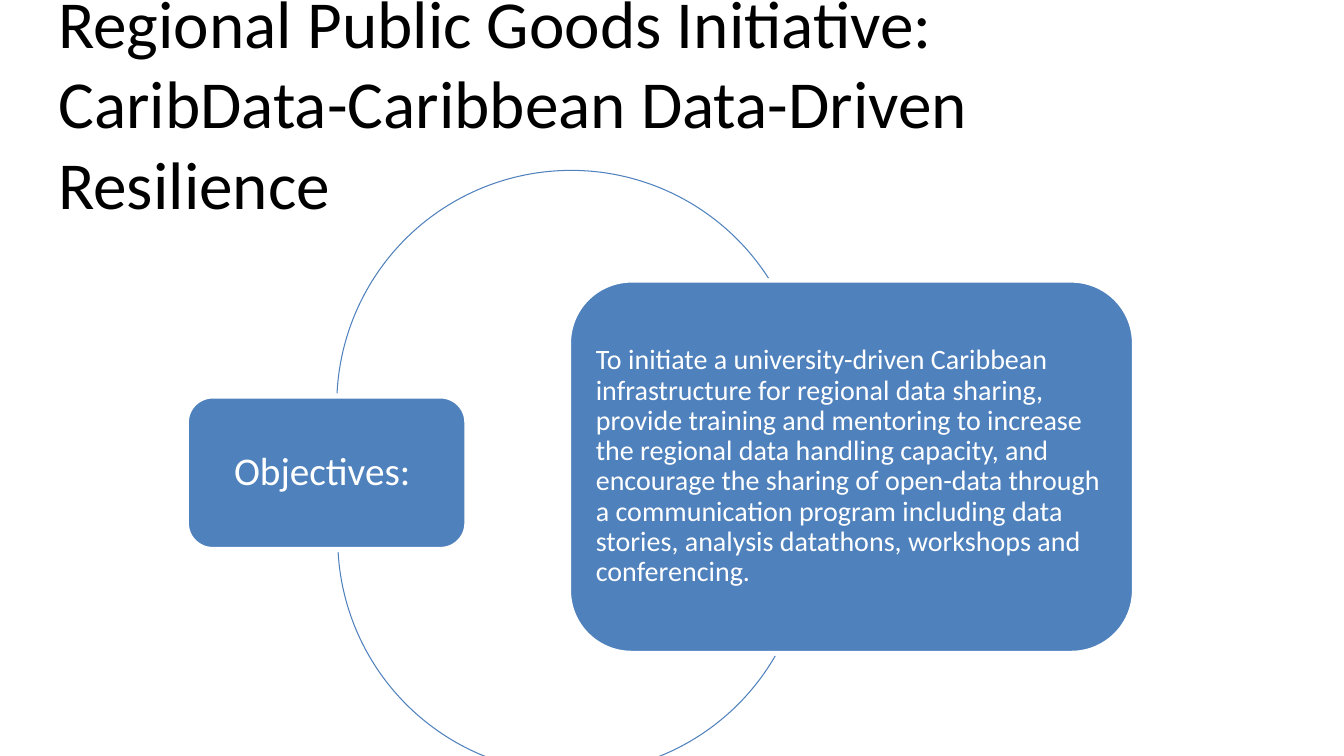
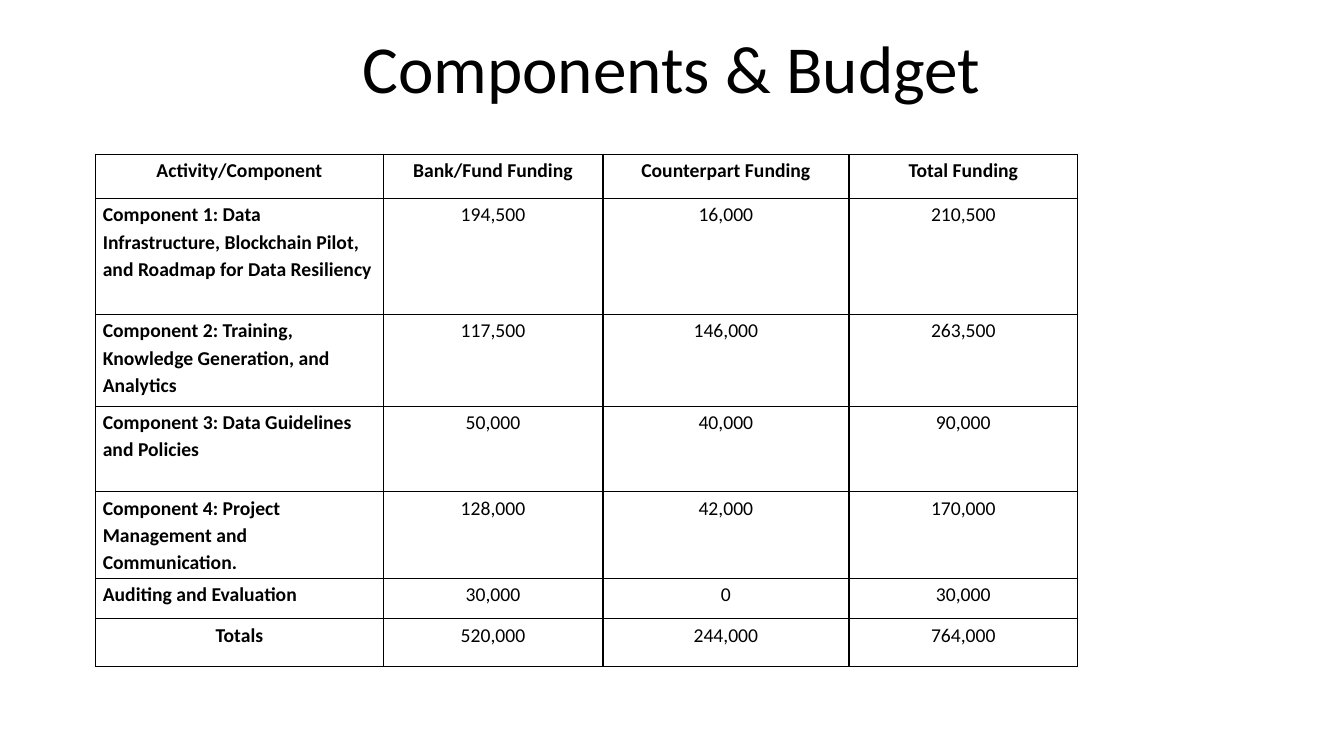
from dataclasses import dataclass
from typing import Any

from lxml import etree
from pptx import Presentation
from pptx.dml.color import RGBColor
from pptx.enum.shapes import MSO_SHAPE
from pptx.enum.text import MSO_ANCHOR, PP_ALIGN
from pptx.oxml.ns import qn
from pptx.util import Inches, Pt

ARC = MSO_SHAPE.ARC
ROUNDED = MSO_SHAPE.ROUNDED_RECTANGLE
LEFT, CENTER = PP_ALIGN.LEFT, PP_ALIGN.CENTER
MIDDLE, TOP = MSO_ANCHOR.MIDDLE, MSO_ANCHOR.TOP

BLUE = "4F81BD"
WHITE = "FFFFFF"
BLACK = "000000"
FONT = "Calibri"
TITLE_SIZE = 48
ARC_UNITS_PER_DEGREE = 0.6


@dataclass(frozen=True)
class Area:
    left: float
    top: float
    width: float
    height: float

    def lengths(self) -> list:
        return [Inches(value) for value in (self.left, self.top, self.width, self.height)]


@dataclass(frozen=True)
class Card:
    area: Area
    text: str
    size: int
    align: Any
    inset: float


@dataclass(frozen=True)
class Arc:
    area: Area
    start: float
    end: float


CARDS = [
    Card(Area(1.86, 3.94, 2.76, 1.5), "Objectives: ", 28, CENTER, 0.12),
    Card(
        Area(5.65, 2.79, 5.59, 3.68),
        "To initiate a university-driven Caribbean infrastructure for regional data sharing, "
        "provide training and mentoring to increase the regional data handling capacity, and "
        "encourage the sharing of open-data through a communication program including data "
        "stories, analysis datathons, workshops and conferencing.",
        20, LEFT, 0.08,
    ),
]
ARCS = [
    Arc(Area(3.34, 1.69, 4.65, 4.65), 182.8, 327.3),
    Arc(Area(3.35, 3.02, 4.65, 4.65), 30, 176.7),
]

BUDGET_ORIGIN = (0.95, 1.53)
COLUMN_WIDTHS = [2.85, 2.18, 2.44, 2.27]
ROW_HEIGHTS = [0.44, 1.15, 0.91, 0.85, 0.86, 0.4, 0.47]
BUDGET_ROWS = [
    ["Activity/Component", "Bank/Fund Funding", "Counterpart Funding", "Total Funding"],
    ["Component 1: Data Infrastructure, Blockchain Pilot, and Roadmap for Data Resiliency",
     "194,500", "16,000", "210,500"],
    ["Component 2: Training, Knowledge Generation, and Analytics",
     "117,500", "146,000", "263,500"],
    ["Component 3: Data Guidelines and Policies", "50,000", "40,000", "90,000"],
    ["Component 4: Project Management and Communication.", "128,000", "42,000", "170,000"],
    ["Auditing and Evaluation", "30,000", "0", "30,000"],
    ["Totals", "520,000", "244,000", "764,000"],
]


def color(value: str) -> RGBColor:
    return RGBColor.from_string(value)


def apply(target: Any, values: dict) -> None:
    for name, value in values.items():
        setattr(target, name, value)


def write(frame: Any, text: str, size: int, tint: str, align: Any,
          spacing: float = 1.0, bold: bool = False) -> None:
    frame.word_wrap = True
    para = frame.paragraphs[0]
    para.text = text
    apply(para, {"alignment": align, "line_spacing": spacing})
    apply(para.font, {"name": FONT, "size": Pt(size), "bold": bold})
    para.font.color.rgb = color(tint)


def add_title(page: Any, text: str, area: Area, align: Any) -> None:
    frame = page.shapes.add_textbox(*area.lengths()).text_frame
    frame.vertical_anchor = MIDDLE
    write(frame, text, TITLE_SIZE, BLACK, align)


def add_arc(page: Any, arc: Arc) -> None:
    shape = page.shapes.add_shape(ARC, *arc.area.lengths())
    shape.shadow.inherit = False
    shape.fill.background()
    shape.line.color.rgb = color(BLUE)
    shape.line.width = Pt(0.75)
    for index, angle in enumerate((arc.start, arc.end)):
        shape.adjustments[index] = angle * ARC_UNITS_PER_DEGREE


def add_card(page: Any, card: Card) -> None:
    box = page.shapes.add_shape(ROUNDED, *card.area.lengths())
    box.shadow.inherit = False
    box.fill.solid()
    box.fill.fore_color.rgb = color(BLUE)
    box.line.color.rgb = color(WHITE)
    box.line.width = Pt(2)
    inset = Inches(card.inset)
    apply(box.text_frame, {"vertical_anchor": MIDDLE, "margin_left": inset,
                           "margin_right": inset, "margin_top": inset, "margin_bottom": inset})
    write(box.text_frame, card.text, card.size, WHITE, card.align, 0.9)


def add_borders(cell: Any, tint: str, width: float) -> None:
    properties = cell._tc.get_or_add_tcPr()
    for index, side in enumerate(("a:lnL", "a:lnR", "a:lnT", "a:lnB")):
        line = etree.Element(qn(side), w=str(Pt(width)))
        fill = etree.SubElement(line, qn("a:solidFill"))
        etree.SubElement(fill, qn("a:srgbClr"), val=tint)
        properties.insert(index, line)


def add_budget(page: Any) -> None:
    area = Area(*BUDGET_ORIGIN, sum(COLUMN_WIDTHS), sum(ROW_HEIGHTS))
    table = page.shapes.add_table(
        len(BUDGET_ROWS), len(COLUMN_WIDTHS), *area.lengths()).table
    apply(table, {"first_row": False, "horz_banding": False})
    for column, width in zip(table.columns, COLUMN_WIDTHS):
        column.width = Inches(width)
    for row, height in zip(table.rows, ROW_HEIGHTS):
        row.height = Inches(height)
    last_row = len(BUDGET_ROWS) - 1
    for row_index, texts in enumerate(BUDGET_ROWS):
        for column_index, text in enumerate(texts):
            cell = table.cell(row_index, column_index)
            is_label = column_index == 0
            align = LEFT if is_label and 0 < row_index < last_row else CENTER
            apply(cell, {"vertical_anchor": TOP,
                         "margin_left": Inches(0.07), "margin_right": Inches(0.07),
                         "margin_top": Inches(0.01), "margin_bottom": Inches(0.02)})
            cell.fill.background()
            add_borders(cell, BLACK, 1)
            write(cell.text_frame, text, 14, BLACK, align, 1.15,
                  bold=is_label or row_index == 0)


def add_page(deck: Any) -> Any:
    return deck.slides.add_slide(deck.slide_layouts[6])


def build_objectives(deck: Any) -> None:
    page = add_page(deck)
    add_title(page, "Regional Public Goods Initiative:\v"
              "CaribData-Caribbean Data-Driven Resilience", Area(0.48, 0.24, 11.8, 1.54), LEFT)
    for arc in ARCS:
        add_arc(page, arc)
    for card in CARDS:
        add_card(page, card)


def build_budget(deck: Any) -> None:
    page = add_page(deck)
    add_title(page, "Components & Budget", Area(0.66, 0.04, 12, 1.25), CENTER)
    add_budget(page)


def main() -> None:
    deck = Presentation()
    apply(deck, {"slide_width": Inches(13.33), "slide_height": Inches(7.5)})
    build_objectives(deck)
    build_budget(deck)
    deck.save("out.pptx")


if __name__ == "__main__":
    main()
